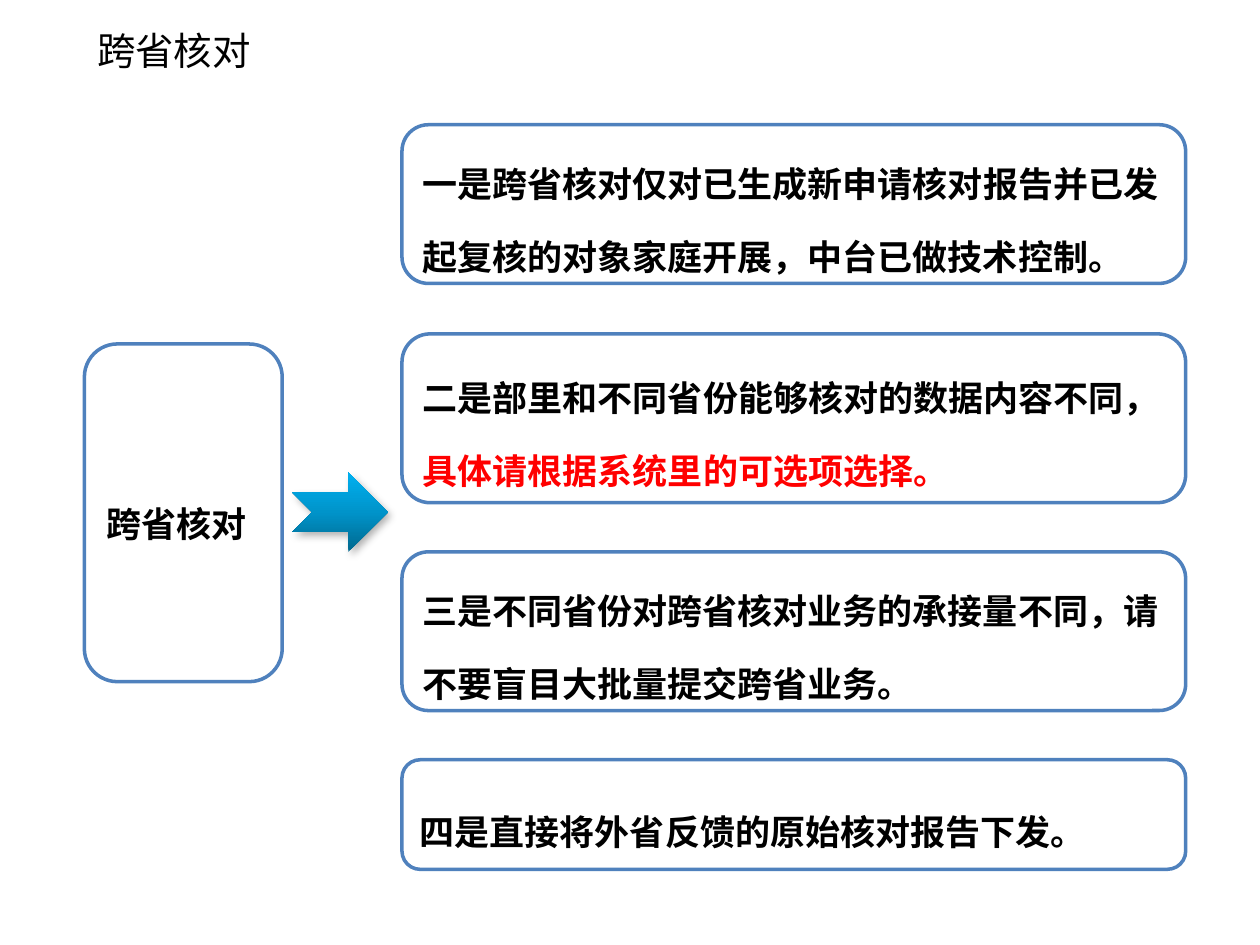
from lxml.etree import SubElement
from pptx import Presentation
from pptx.dml.color import RGBColor
from pptx.enum.shapes import MSO_SHAPE as Shape
from pptx.enum.text import MSO_ANCHOR as Anchor, PP_ALIGN as Align
from pptx.oxml import parse_xml
from pptx.oxml.ns import nsdecls, qn
from pptx.util import Inches, Pt

BLACK, RED, BLUE = "000000", "FF0000", "4F81BD"
LATIN, CJK = "Calibri", "Noto Sans CJK SC"
ARROW_STOPS = [(0, "00688E"), (50, "0094CA"), (100, "00B0F0")]

# top, height, line spacing, runs of (text, font, colour)
POINTS = [
    (0.99, 1.26, Pt(42), [
        ("一是", CJK, BLACK),
        ("跨省核对仅对已生成新申请核对报告并已发起复核的对象家庭开展，中台已做技术控制。", LATIN, BLACK)]),
    (2.65, 1.34, Pt(42), [
        ("二是部里和不同省份能够核对的数据内容不同，", LATIN, BLACK),
        ("具体请根据系统里的可选项选择。", LATIN, RED)]),
    (4.38, 1.26, Pt(42), [
        ("三是不同省份对跨省核对业务的承接量不同，请不要盲目大批量提交跨省业务。", LATIN, BLACK)]),
    (6.03, 0.87, Pt(43), [
        ("四是直接将外省反馈的原始核对报告下发。", CJK, BLACK)]),
]


def color(hex_value):
    return RGBColor.from_string(hex_value)


def set_title(slide, text):
    title = slide.shapes.title
    title.left, title.top = Inches(0.67), Inches(0.08)
    title.width, title.height = Inches(7.67), Inches(0.64)
    title.text_frame.text = text
    title.text_frame.vertical_anchor = Anchor.MIDDLE
    para = title.text_frame.paragraphs[0]
    para.alignment = Align.LEFT
    para.font.size = Pt(22)
    para.font.name = LATIN
    para.font.color.rgb = color(BLACK)


def add_round_box(slide, left, top, width, height, spacing, runs):
    box = slide.shapes.add_shape(Shape.ROUNDED_RECTANGLE, Inches(left), Inches(top),
                                 Inches(width), Inches(height))
    box.shadow.inherit = False
    box.fill.background()
    box.line.color.rgb = color(BLUE)
    box.line.width = Pt(2)
    frame = box.text_frame
    frame.word_wrap = True
    frame.vertical_anchor = Anchor.MIDDLE
    para = frame.paragraphs[0]
    para.alignment = Align.LEFT
    para.line_spacing = spacing
    para.font.size = Pt(20)
    para.font.bold = True
    for text, font_name, hex_value in runs:
        span = para.add_run()
        span.text = text
        span.font.name = font_name
        span.font.color.rgb = color(hex_value)
        SubElement(span.font._element, qn("a:ea"), typeface=CJK)


def add_arrow(slide):
    """Add a notched arrow with a three-stop gradient and a soft shadow."""
    arrow = slide.shapes.add_shape(Shape.NOTCHED_RIGHT_ARROW, Inches(2.32), Inches(3.75),
                                   Inches(0.76), Inches(0.63))
    arrow.line.fill.background()
    stops = "".join(f'<a:gs pos="{position * 1000}"><a:srgbClr val="{hex_value}"/></a:gs>'
                    for position, hex_value in ARROW_STOPS)
    gradient = parse_xml(f'<a:gradFill {nsdecls("a")} rotWithShape="1"><a:gsLst>{stops}</a:gsLst>'
                         '<a:lin ang="16200000" scaled="0"/></a:gradFill>')
    shadow = parse_xml(f'<a:effectLst {nsdecls("a")}>'
                       f'<a:outerShdw blurRad="{Pt(4.5)}" dist="{Pt(2.6)}" dir="{53 * 60000}">'
                       f'<a:srgbClr val="{BLACK}"><a:alpha val="30000"/></a:srgbClr>'
                       '</a:outerShdw></a:effectLst>')
    properties = arrow._element.spPr
    properties.find(qn("a:prstGeom")).addnext(gradient)
    properties.append(shadow)


def main():
    deck = Presentation()
    deck.slide_width, deck.slide_height = Inches(10), Inches(7.5)
    slide = deck.slides.add_slide(deck.slide_layouts[5])
    set_title(slide, "跨省核对")
    add_arrow(slide)
    add_round_box(slide, 0.67, 2.73, 1.57, 2.68, 1.5, [("跨省核对", LATIN, BLACK)])
    for top, height, spacing, runs in POINTS:
        add_round_box(slide, 3.19, top, 6.22, height, spacing, runs)
    deck.save("out.pptx")


if __name__ == "__main__":
    main()
